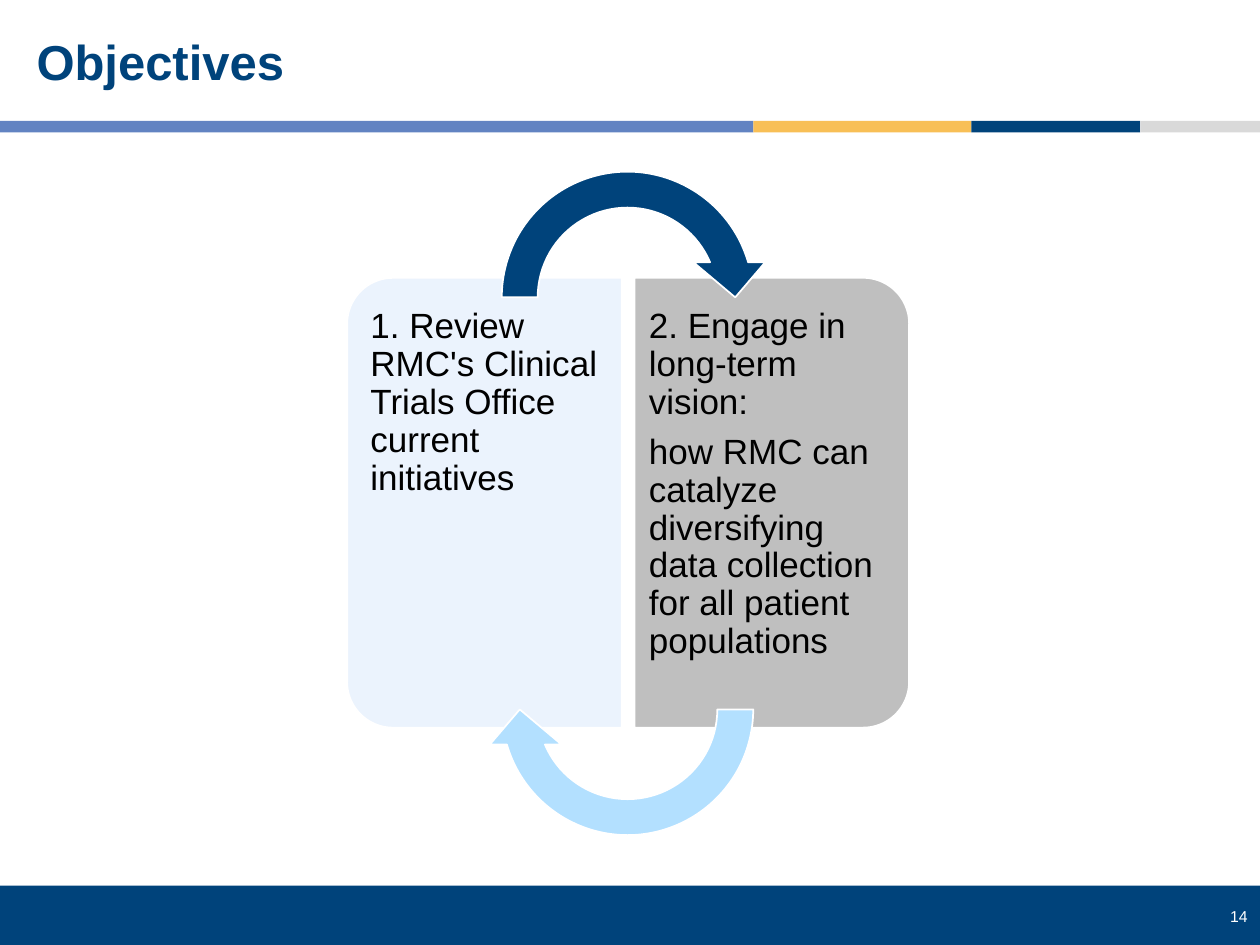
"""Build the Objectives slide with a two-panel cycle diagram."""
import pptx
import pptx.dml.color
import pptx.enum.shapes
import pptx.enum.text
import pptx.util

Inches = pptx.util.Inches
Pt = pptx.util.Pt
RGBColor = pptx.dml.color.RGBColor
Shape = pptx.enum.shapes.MSO_SHAPE
Align = pptx.enum.text.PP_ALIGN
Anchor = pptx.enum.text.MSO_ANCHOR

NAVY = RGBColor(0x00, 0x43, 0x7B)
BLUE = RGBColor(0x62, 0x83, 0xC2)
GOLD = RGBColor(0xF8, 0xBF, 0x56)
SILVER = RGBColor(0xD9, 0xD9, 0xD9)
PALE_BLUE = RGBColor(0xEB, 0xF3, 0xFD)
GRAY = RGBColor(0xBF, 0xBF, 0xBF)
SKY = RGBColor(0xB3, 0xE0, 0xFF)
BLACK = RGBColor(0, 0, 0)
WHITE = RGBColor(0xFF, 0xFF, 0xFF)


def write_text(frame, *texts, size=20, color=BLACK, bold=False, align=Align.LEFT,
               anchor=Anchor.TOP, insets=(0.1, 0.05, 0.1, 0.05), spacing=0.9, after=0):
    frame.word_wrap = True
    frame.auto_size = pptx.enum.text.MSO_AUTO_SIZE.NONE
    frame.vertical_anchor = anchor
    frame.margin_left, frame.margin_top, frame.margin_right, frame.margin_bottom = map(Inches, insets)
    for index, text in enumerate(texts):
        paragraph = frame.add_paragraph() if index else frame.paragraphs[0]
        paragraph.alignment = align
        paragraph.line_spacing = spacing
        paragraph.space_before = Pt(0)
        paragraph.space_after = Pt(after)
        run = paragraph.add_run()
        run.text = text
        run.font.name = "Arial"
        run.font.size = Pt(size)
        run.font.bold = bold
        run.font.color.rgb = color


class SlideBuilder:
    def __init__(self, presentation):
        self.slide = presentation.slides.add_slide(presentation.slide_layouts[5])

    def title(self, text, left, top, width, height):
        shape = self.slide.shapes.title
        shape.left, shape.top, shape.width, shape.height = map(Inches, (left, top, width, height))
        write_text(shape.text_frame, text, size=28, color=NAVY, bold=True, anchor=Anchor.MIDDLE)

    def shape(self, kind, left, top, width, height, fill, outline=None, rotation=0, adjustments=()):
        shape = self.slide.shapes.add_shape(kind, *map(Inches, (left, top, width, height)))
        shape.shadow.inherit = False
        shape.fill.solid()
        shape.fill.fore_color.rgb = fill
        if outline is None:
            shape.line.fill.background()
        else:
            shape.line.color.rgb = outline
            shape.line.width = Pt(1)
        shape.rotation = rotation
        for index, value in enumerate(adjustments):
            shape.adjustments[index] = value

    def text(self, left, top, width, height, *texts, **style):
        box = self.slide.shapes.add_textbox(*map(Inches, (left, top, width, height)))
        write_text(box.text_frame, *texts, **style)

    def panel(self, left, fill, rotation, text_left, insets, *texts):
        self.shape(Shape.ROUND_2_SAME_RECTANGLE, left, 2.9, 3.57, 2.18, fill, WHITE, rotation, (0.167, 0))
        self.text(text_left, 2.31, 2.08, 3.36, *texts, insets=insets, after=7)

    def cycle_arrow(self, top, fill, rotation):
        self.shape(Shape.CIRCULAR_ARROW, 3.84, top, 2.28, 2.28, fill, WHITE, rotation,
                   (0.125, 11.423, 204.577, 108, 0.125))


def main():
    presentation = pptx.Presentation()
    presentation.slide_width = Inches(10)
    presentation.slide_height = Inches(7.5)
    builder = SlideBuilder(presentation)

    builder.shape(Shape.RECTANGLE, 0, 7.03, 10, 0.47, NAVY)
    builder.text(9.31, 7.15, 0.69, 0.25, "14", size=9, color=WHITE, align=Align.RIGHT, spacing=1)
    edges = (0, 5.98, 7.71, 9.05, 10)
    for left, right, color in zip(edges, edges[1:], (BLUE, GOLD, NAVY, SILVER)):
        builder.shape(Shape.RECTANGLE, left, 0.96, right - left, 0.09, color)
    builder.title("Objectives", 0.19, 0.17, 9.57, 0.69)

    builder.panel(2.06, PALE_BLUE, 270, 2.86, (0.08, 0.14, 0.12, 0.14),
                  "1. Review RMC's Clinical Trials Office current initiatives")
    builder.panel(4.34, GRAY, 90, 5.03, (0.12, 0.14, 0.08, 0.14),
                  "2. Engage in long-term vision:",
                  "how RMC can catalyze diversifying data collection for all patient populations")
    builder.cycle_arrow(1.22, NAVY, 0)
    builder.cycle_arrow(4.49, SKY, 180)
    presentation.save("out.pptx")


if __name__ == "__main__":
    main()
